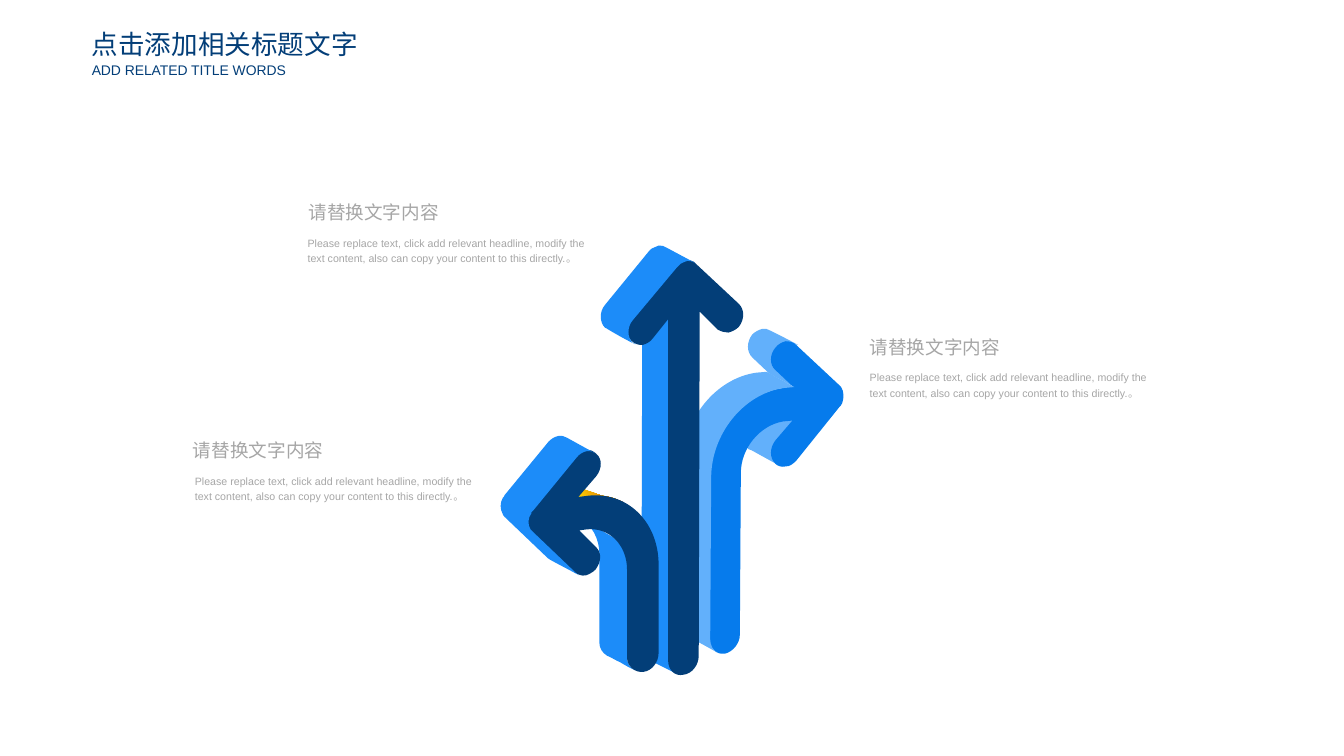
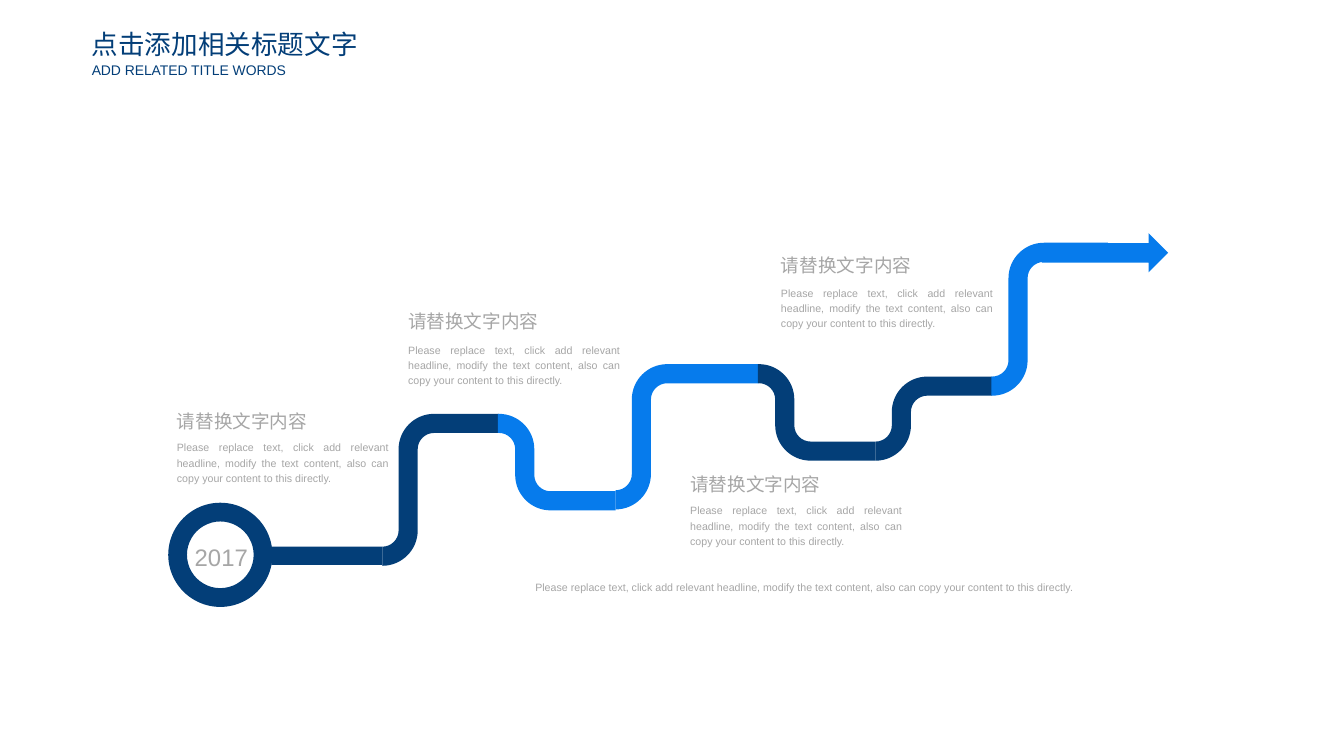
import math

import lxml.etree
import pptx
import pptx.dml.color
import pptx.enum.shapes
import pptx.enum.text
import pptx.oxml.ns
import pptx.util

Inches, Pt = pptx.util.Inches, pptx.util.Pt
RGBColor = pptx.dml.color.RGBColor
MSO_SHAPE = pptx.enum.shapes.MSO_SHAPE
PP_ALIGN = pptx.enum.text.PP_ALIGN
MSO_ANCHOR = pptx.enum.text.MSO_ANCHOR
MSO_AUTO_SIZE = pptx.enum.text.MSO_AUTO_SIZE
qn = pptx.oxml.ns.qn

NAVY = RGBColor(0x03, 0x3E, 0x78)
BLUE = RGBColor(0x06, 0x7B, 0xEC)
AZURE = RGBColor(0x1C, 0x8C, 0xF9)
SKY = RGBColor(0x62, 0xB0, 0xFB)
GRAY = RGBColor(0xA6, 0xA6, 0xA6)
YELLOW = RGBColor(0xFE, 0xCE, 0x02)
RUST = RGBColor(0xC7, 0x3E, 0x01)

FONT = "Arial"
HEADING = "请替换文字内容"
BODY = ("Please replace text, click add relevant headline, modify the text "
        "content, also can copy your content to this directly.")

TITLE_FONT = {"size": Pt(20), "name": FONT}
SUBTITLE_FONT = {"size": Pt(10.5), "name": FONT}
HEADING_FONT = {"size": Pt(14), "name": FONT}
BODY_FONT = {"size": Pt(8), "name": FONT}
YEAR_FONT = {"size": Pt(18), "name": FONT}
NO_MARGINS = dict.fromkeys(
    ("margin_left", "margin_top", "margin_right", "margin_bottom"), 0)
FLUSH = {"word_wrap": True, **NO_MARGINS}
FLUSH_MIDDLE = {**FLUSH, "vertical_anchor": MSO_ANCHOR.MIDDLE}
ONE_LINE = {"word_wrap": False}
SPACED = {"line_spacing": 1.2}
JUSTIFIED = {**SPACED, "alignment": PP_ALIGN.JUSTIFY}

BEND_RADIUS = 0.27
ROAD_WIDTH = 0.2
QUARTER_ARC = 0.55  # control length of a Bézier quarter circle, per radius

# Outlines in inches: a pair is a line's end, six numbers are a Bézier curve.
RIGHT_HEAD_LOWER_SIDE = [
    (8.12, 4.62), (8.3, 4.4), (8.01, 4.24), (7.83, 4.46),
    (7.77, 4.53, 7.77, 4.64, 7.83, 4.7), (7.84, 4.7, 7.85, 4.71, 7.86, 4.71),
    (8.15, 4.87), (8.14, 4.87, 8.13, 4.86, 8.12, 4.86),
    (8.06, 4.8, 8.06, 4.69, 8.12, 4.62)]
RIGHT_HEAD_UPPER_SIDE = [
    (8.16, 3.66), (8.19, 3.63, 8.23, 3.6, 8.27, 3.6),
    (8.3, 3.6, 8.33, 3.6, 8.35, 3.61), (8.26, 3.56, 8.16, 3.51, 8.06, 3.46),
    (8.03, 3.44, 8.01, 3.44, 7.98, 3.44), (7.94, 3.45, 7.9, 3.47, 7.87, 3.5),
    (7.81, 3.58, 7.81, 3.68, 7.87, 3.74), (8.05, 3.91), (8.35, 4.07),
    (8.16, 3.9), (8.1, 3.84, 8.1, 3.74, 8.16, 3.66)]
RIGHT_FACE = [
    (8.22, 3.57), (8.26, 3.57, 8.3, 3.58, 8.33, 3.61), (8.78, 4.03),
    (8.79, 4.04, 8.79, 4.04, 8.8, 4.05), (8.83, 4.1, 8.83, 4.16, 8.81, 4.22),
    (8.8, 4.24, 8.79, 4.25, 8.78, 4.26), (8.33, 4.82),
    (8.29, 4.86, 8.26, 4.88, 8.22, 4.88), (8.18, 4.89, 8.14, 4.88, 8.11, 4.85),
    (8.05, 4.79, 8.05, 4.69, 8.11, 4.61), (8.29, 4.4), (8.19, 4.41),
    (7.95, 4.45, 7.75, 4.69, 7.75, 4.95), (7.74, 6.64),
    (7.74, 6.73, 7.67, 6.82, 7.58, 6.84), (7.49, 6.85, 7.42, 6.78, 7.42, 6.68),
    (7.42, 4.99), (7.42, 4.53, 7.77, 4.12, 8.19, 4.06), (8.29, 4.04),
    (8.11, 3.87), (8.05, 3.82, 8.05, 3.71, 8.11, 3.64),
    (8.14, 3.6, 8.18, 3.58, 8.22, 3.57)]
RIGHT_STEM_SIDE = [
    (8.02, 3.89), (7.91, 3.9), (7.49, 3.96, 7.15, 4.38, 7.14, 4.84),
    (7.14, 6.53), (7.14, 6.59, 7.17, 6.65, 7.22, 6.67), (7.51, 6.83),
    (7.46, 6.81, 7.43, 6.75, 7.43, 6.69), (7.44, 5),
    (7.44, 4.54, 7.78, 4.12, 8.2, 4.06), (8.31, 4.05)]
UP_STEM_SIDE = [
    (7, 6.92), (7.01, 3.35), (6.72, 3.19), (6.71, 6.76),
    (6.71, 6.82, 6.74, 6.87, 6.78, 6.9), (7.08, 7.05),
    (7.03, 7.03, 7, 6.98, 7, 6.92)]
UP_FACE = [
    (7.17, 2.72), (7.2, 2.72, 7.23, 2.72, 7.26, 2.74),
    (7.27, 2.75, 7.28, 2.75, 7.28, 2.76), (7.73, 3.18),
    (7.79, 3.24, 7.79, 3.34, 7.73, 3.42), (7.7, 3.45, 7.66, 3.47, 7.62, 3.48),
    (7.58, 3.48, 7.55, 3.47, 7.51, 3.45), (7.32, 3.26), (7.31, 6.86),
    (7.31, 6.96, 7.24, 7.05, 7.15, 7.06), (7.06, 7.08, 6.99, 7.01, 6.99, 6.91),
    (6.99, 3.34), (6.83, 3.54), (6.8, 3.58, 6.76, 3.6, 6.72, 3.61),
    (6.68, 3.61, 6.64, 3.6, 6.61, 3.57), (6.55, 3.52, 6.55, 3.41, 6.61, 3.34),
    (7.07, 2.79), (7.08, 2.77, 7.09, 2.76, 7.1, 2.75),
    (7.12, 2.74, 7.15, 2.73, 7.17, 2.72)]
UP_HEAD_SIDE = [
    (6.97, 2.59), (6.95, 2.57, 6.92, 2.57, 6.89, 2.57),
    (6.87, 2.58, 6.84, 2.59, 6.82, 2.6), (6.81, 2.61, 6.79, 2.62, 6.78, 2.64),
    (6.33, 3.19), (6.27, 3.26, 6.27, 3.37, 6.33, 3.43),
    (6.34, 3.43, 6.35, 3.44, 6.35, 3.44), (6.45, 3.5, 6.54, 3.55, 6.64, 3.6),
    (6.65, 3.6), (6.64, 3.6, 6.63, 3.59, 6.62, 3.59),
    (6.56, 3.53, 6.56, 3.42, 6.62, 3.35), (7.08, 2.8),
    (7.09, 2.78, 7.1, 2.77, 7.12, 2.76), (7.14, 2.75, 7.16, 2.74, 7.19, 2.73),
    (7.21, 2.73, 7.24, 2.73, 7.27, 2.75)]
LEFT_STEM_TOP = [
    (5.84, 5.03), (5.77, 5.04), (6.06, 5.2), (6.14, 5.19),
    (6.29, 5.17, 6.42, 5.2, 6.54, 5.27)]
LEFT_STEM_SIDE = [
    (6.56, 6.88), (6.57, 5.96), (6.57, 5.79, 6.49, 5.65, 6.36, 5.59),
    (6.26, 5.53, 6.17, 5.48, 6.07, 5.43), (6.19, 5.49, 6.27, 5.63, 6.27, 5.8),
    (6.27, 6.72), (6.27, 6.78, 6.3, 6.83, 6.35, 6.86),
    (6.4, 6.88, 6.44, 6.91, 6.49, 6.93), (6.54, 6.96, 6.59, 6.99, 6.64, 7.01),
    (6.59, 6.99, 6.56, 6.94, 6.56, 6.88)]
LEFT_FACE = [
    (6.13, 4.71), (6.17, 4.7, 6.21, 4.72, 6.24, 4.75),
    (6.3, 4.8, 6.3, 4.9, 6.24, 4.98), (6.05, 5.2), (6.13, 5.19),
    (6.55, 5.13, 6.89, 5.45, 6.89, 5.91), (6.89, 6.83),
    (6.89, 6.93, 6.82, 7.02, 6.73, 7.03), (6.64, 7.04, 6.56, 6.97, 6.56, 6.88),
    (6.56, 5.96), (6.56, 5.7, 6.37, 5.51, 6.13, 5.54), (6.06, 5.55),
    (6.23, 5.72), (6.3, 5.78, 6.29, 5.88, 6.23, 5.96),
    (6.2, 5.99, 6.16, 6.01, 6.13, 6.02), (6.08, 6.03, 6.05, 6.01, 6.01, 5.99),
    (5.56, 5.56), (5.55, 5.55, 5.54, 5.54, 5.54, 5.53),
    (5.51, 5.48, 5.51, 5.41, 5.54, 5.36), (5.54, 5.35, 5.55, 5.35, 5.55, 5.35),
    (5.55, 5.34, 5.56, 5.33, 5.56, 5.33), (6.02, 4.78),
    (6.05, 4.74, 6.09, 4.72, 6.13, 4.71)]
LEFT_HEAD_SIDE = [
    (5.93, 4.58), (5.9, 4.56, 5.87, 4.56, 5.85, 4.56),
    (5.8, 4.57, 5.77, 4.59, 5.74, 4.62), (5.28, 5.18),
    (5.28, 5.19, 5.27, 5.19, 5.27, 5.2), (5.27, 5.2, 5.27, 5.21, 5.26, 5.21),
    (5.23, 5.26, 5.23, 5.33, 5.26, 5.38), (5.26, 5.39, 5.27, 5.4, 5.28, 5.41),
    (5.73, 5.84), (5.74, 5.85, 5.75, 5.85, 5.76, 5.86),
    (5.85, 5.91, 5.95, 5.96, 6.04, 6.01), (6.04, 6.01, 6.05, 6.02, 6.05, 6.02),
    (6.04, 6.01, 6.04, 6.01, 6.03, 6), (5.58, 5.57),
    (5.56, 5.56, 5.56, 5.55, 5.55, 5.54), (5.52, 5.49, 5.52, 5.42, 5.56, 5.37),
    (5.56, 5.37, 5.56, 5.36, 5.56, 5.36), (5.57, 5.35, 5.57, 5.34, 5.58, 5.34),
    (6.03, 4.79), (6.06, 4.75, 6.1, 4.73, 6.14, 4.72),
    (6.17, 4.72, 6.2, 4.72, 6.22, 4.74)]

ARROW_PARTS = [
    (RIGHT_HEAD_LOWER_SIDE, SKY), (RIGHT_HEAD_UPPER_SIDE, SKY),
    (RIGHT_FACE, BLUE), (RIGHT_STEM_SIDE, SKY), (UP_STEM_SIDE, AZURE),
    (UP_FACE, NAVY), (UP_HEAD_SIDE, AZURE),
    (LEFT_STEM_TOP, ((0.37, YELLOW), (0.98, RUST))),
    (LEFT_STEM_SIDE, AZURE), (LEFT_FACE, NAVY), (LEFT_HEAD_SIDE, AZURE)]

# Centre lines of the road, with square corners that get rounded.
ROAD_PIECES = [
    ([(6.44, 5.23), (6.71, 5.23), (6.71, 3.91), (7.94, 3.91)], BLUE),
    ([(9.16, 4.72), (9.43, 4.72), (9.43, 4.04), (10.38, 4.04)], NAVY),
    ([(7.93, 3.91), (8.21, 3.91), (8.21, 4.72), (9.16, 4.72)], NAVY),
    ([(4, 5.82), (4.27, 5.82), (4.27, 4.43), (5.22, 4.43)], NAVY),
    ([(5.21, 4.43), (5.49, 4.43), (5.49, 5.24), (6.44, 5.24)], BLUE),
    ([(10.37, 4.04), (10.65, 4.04), (10.65, 2.64), (11.59, 2.64)], BLUE)]


def set_all(obj, values):
    for name, value in values.items():
        setattr(obj, name, value)


def paint(sp, fill):
    """Fill with one colour, or with a gradient given as (position, colour) stops."""
    sp.shadow.inherit = False
    sp.line.fill.background()
    if isinstance(fill, RGBColor):
        sp.fill.solid()
        sp.fill.fore_color.rgb = fill
        return
    sp.fill.gradient()
    sp.fill.gradient_angle = 30
    for stop, (position, color) in zip(sp.fill.gradient_stops, fill):
        stop.position = position
        stop.color.rgb = color


def add_preset(shapes, kind, box, fill, adjustments=()):
    sp = shapes.add_shape(kind, *map(Inches, box))
    for i, value in enumerate(adjustments):
        sp.adjustments[i] = value
    paint(sp, fill)


def add_outline(shapes, outline, fill):
    """Draw lines through all points, then turn each run of three into its curve."""
    start, *rest = [(Inches(x), Inches(y)) for segment in outline
                    for x, y in zip(segment[::2], segment[1::2])]
    builder = shapes.build_freeform(*start)
    builder.add_line_segments(rest, close=True)
    sp = builder.convert_to_shape()
    lines = iter(list(sp.element.iter(qn("a:lnTo"))))
    for segment in outline[1:]:
        steps = [next(lines) for _ in segment[::2]]
        if len(steps) == 3:
            curve = lxml.etree.Element(qn("a:cubicBezTo"))
            steps[0].addprevious(curve)
            for step in steps:
                curve.append(step[0])
                step.getparent().remove(step)
    paint(sp, fill)


def direction(a, b):
    length = math.dist(a, b)
    return (b[0] - a[0]) / length, (b[1] - a[1]) / length


def move(point, way, distance):
    return point[0] + way[0] * distance, point[1] + way[1] * distance


def left_edge(line):
    """Left border of the road along a centre line, with rounded corners."""
    half = ROAD_WIDTH / 2
    dx, dy = direction(*line[:2])
    edge = [move(line[0], (dy, -dx), half)]
    for before, corner, after in zip(line, line[1:], line[2:]):
        d1, d2 = direction(before, corner), direction(corner, after)
        turn = d1[0] * d2[1] - d1[1] * d2[0]
        radius = BEND_RADIUS + half * turn
        center = move(move(corner, d1, -BEND_RADIUS), d2, BEND_RADIUS)
        start, end = move(center, d2, -radius), move(center, d1, radius)
        pull = QUARTER_ARC * radius
        edge += [start, (*move(start, d1, pull), *move(end, d2, -pull), *end)]
    dx, dy = direction(*line[-2:])
    return edge + [move(line[-1], (dy, -dx), half)]


def add_text(shapes, text, box, font, color, frame, paragraph=None):
    tf = shapes.add_textbox(*map(Inches, box)).text_frame
    set_all(tf, {"auto_size": MSO_AUTO_SIZE.SHAPE_TO_FIT_TEXT, **frame})
    p = tf.paragraphs[0]
    set_all(p, paragraph or {})
    r = p.add_run()
    r.text = text
    set_all(r.font, font)
    r.font.color.rgb = color


def add_title(s):
    frame = {**NO_MARGINS, **ONE_LINE}
    add_text(s.shapes, "点击添加相关标题文字", (0.96, 0.29, 2.8, 0.34),
             TITLE_FONT, NAVY, frame)
    add_text(s.shapes, "ADD RELATED TITLE WORDS", (0.96, 0.64, 2.08, 0.18),
             SUBTITLE_FONT, NAVY, frame)


def build_arrows_slide(s):
    arrows = s.shapes.add_group_shape().shapes
    for outline, fill in ARROW_PARTS:
        add_outline(arrows, outline, fill)
    for x, body_x, y, align in ((9, 9, 3.42, PP_ALIGN.LEFT),
                                (1.92, 1.94, 4.5, PP_ALIGN.LEFT),
                                (3.11, 3.12, 2.01, PP_ALIGN.RIGHT)):
        caption = s.shapes.add_group_shape().shapes
        add_text(caption, HEADING, (x, y, 1.58, 0.36), HEADING_FONT, GRAY,
                 ONE_LINE, {**SPACED, "alignment": align})
        add_text(caption, BODY + "。", (body_x, y + 0.39, 3.13, 0.41), BODY_FONT,
                 GRAY, {"word_wrap": True}, SPACED)


def build_road_slide(s):
    for line, color in ROAD_PIECES:
        add_outline(s.shapes, left_edge(line) + left_edge(line[::-1]), color)
    add_preset(s.shapes, MSO_SHAPE.DONUT, (1.76, 5.26, 1.09, 1.09), NAVY, [0.18])
    add_text(s.shapes, "2017", (1.86, 5.62, 0.91, 0.36), YEAR_FONT, GRAY, FLUSH,
             {**SPACED, "alignment": PP_ALIGN.CENTER})
    add_preset(s.shapes, MSO_SHAPE.RECTANGLE, (2.84, 5.72, 1.16, 0.19), NAVY)
    add_preset(s.shapes, MSO_SHAPE.RIGHT_ARROW, (10.9, 2.44, 1.32, 0.41), BLUE)
    add_text(s.shapes, BODY, (5.6, 6.05, 6.76, 0.15), BODY_FONT, GRAY, FLUSH, JUSTIFIED)
    for x, y, body_y, width in ((4.27, 3.2, 3.57, 1.83), (7.22, 4.9, 5.25, 1.91),
                                (8.17, 2.61, 2.97, 1.97), (1.85, 4.24, 4.59, 1.75)):
        caption = s.shapes.add_group_shape().shapes
        add_text(caption, HEADING, (x, y, width, 0.28), HEADING_FONT, GRAY, FLUSH, SPACED)
        add_text(caption, BODY, (x, body_y, 2.22, 0.48), BODY_FONT, GRAY,
                 FLUSH_MIDDLE, JUSTIFIED)


def main():
    prs = pptx.Presentation()
    prs.slide_width, prs.slide_height = Inches(14.06), Inches(7.91)
    for build in (build_arrows_slide, build_road_slide):
        s = prs.slides.add_slide(prs.slide_layouts[6])
        build(s)
        add_title(s)
    prs.save("out.pptx")


if __name__ == "__main__":
    main()
